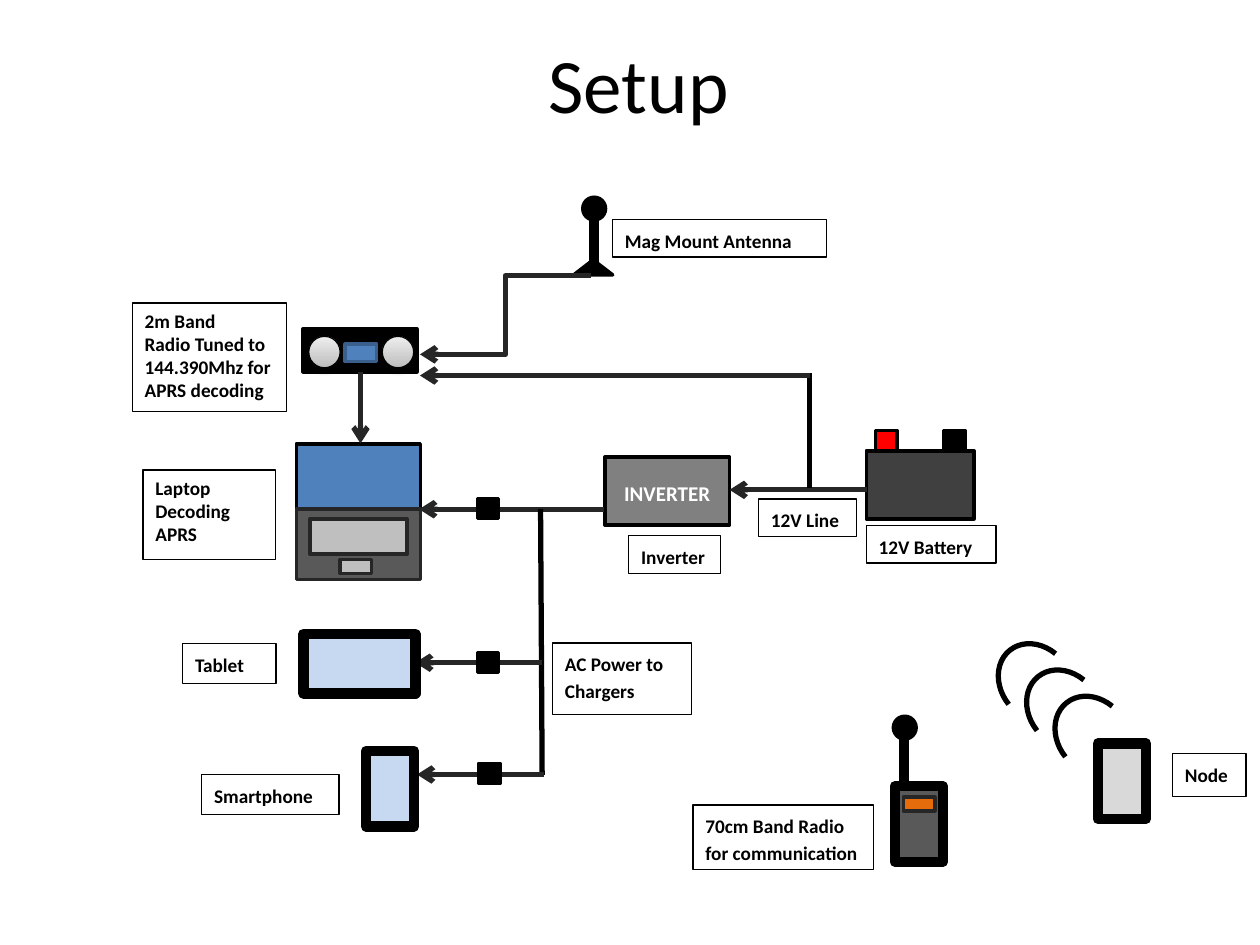
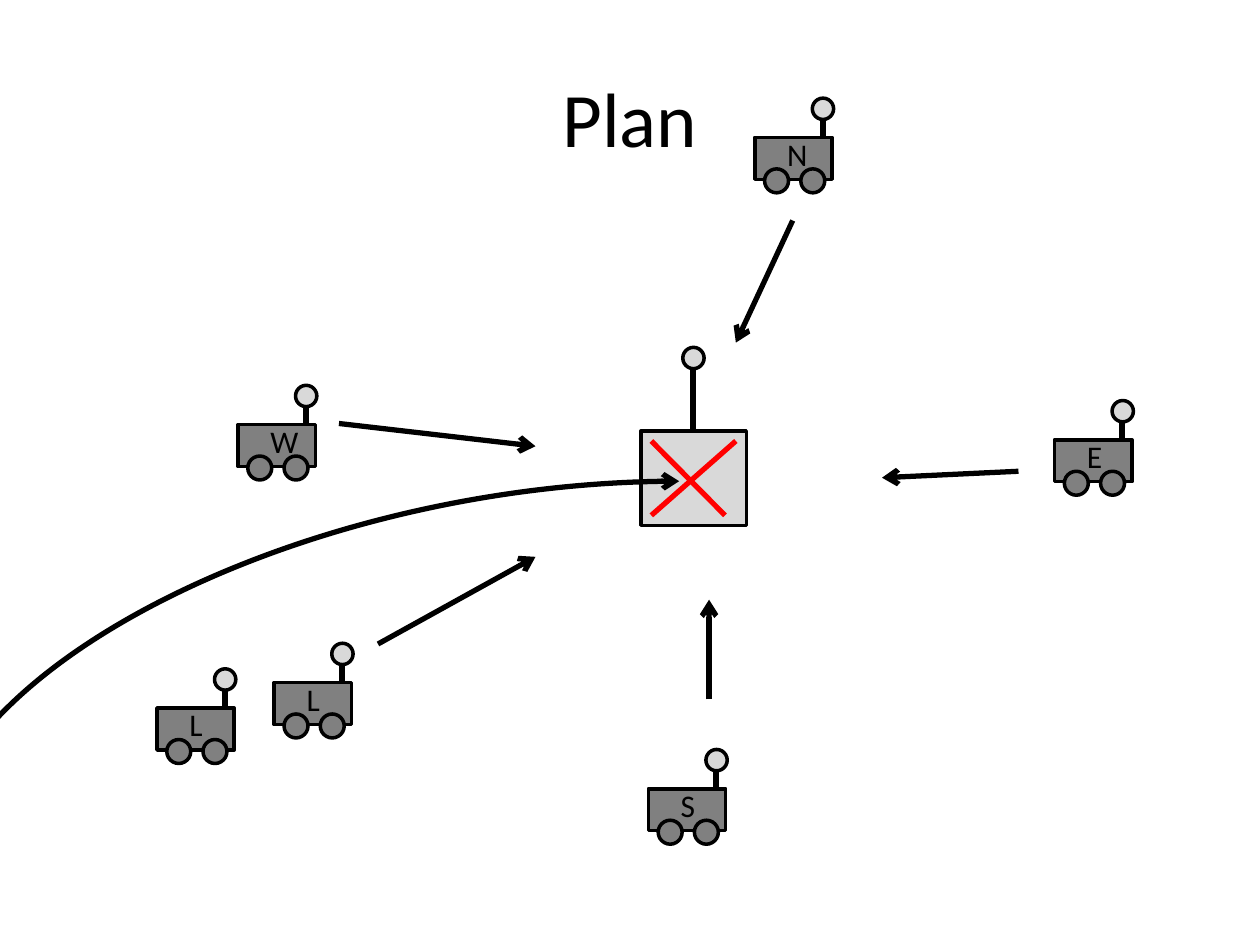
from lxml import etree
from pptx import Presentation
from pptx.dml.color import RGBColor
from pptx.enum.shapes import MSO_CONNECTOR, MSO_SHAPE
from pptx.enum.text import MSO_ANCHOR, PP_ALIGN
from pptx.oxml.ns import qn
from pptx.util import Pt

RECT, OVAL = MSO_SHAPE.RECTANGLE, MSO_SHAPE.OVAL
TRIANGLE, ARC = MSO_SHAPE.ISOSCELES_TRIANGLE, MSO_SHAPE.ARC
STRAIGHT, ELBOW, CURVE = MSO_CONNECTOR.STRAIGHT, MSO_CONNECTOR.ELBOW, MSO_CONNECTOR.CURVE
TOP, MIDDLE = MSO_ANCHOR.TOP, MSO_ANCHOR.MIDDLE
LEFT, CENTER = PP_ALIGN.LEFT, PP_ALIGN.CENTER

FONT = "Calibri"
BLACK = RGBColor(0x00, 0x00, 0x00)
WHITE = RGBColor(0xFF, 0xFF, 0xFF)
RED = RGBColor(0xFF, 0x00, 0x00)
INK = RGBColor(0x26, 0x26, 0x26)
CHARCOAL = RGBColor(0x40, 0x40, 0x40)
DARK_GRAY = RGBColor(0x59, 0x59, 0x59)
GRAY = RGBColor(0x80, 0x80, 0x80)
SILVER = RGBColor(0xBF, 0xBF, 0xBF)
LIGHT_GRAY = RGBColor(0xD9, 0xD9, 0xD9)
KNOB_DARK = RGBColor(0xBD, 0xBD, 0xBD)
KNOB_LIGHT = RGBColor(0xEE, 0xEE, 0xEE)
BLUE = RGBColor(0x4F, 0x81, 0xBD)
BLUE_EDGE = RGBColor(0x3A, 0x5F, 0x8C)
PALE_BLUE = RGBColor(0xC6, 0xD9, 0xF1)
ORANGE = RGBColor(0xE4, 0x6C, 0x0A)

LABELS = [
    (350, 125.3, 122.4, 21.6, ["Mag Mount Antenna"], 1.15),
    (433.4, 285.1, 56.2, 21.6, ["12V Line"], 1.15),
    (495, 300.2, 74.2, 21.6, ["12V Battery"], 1.15),
    (359.3, 306, 52.6, 21.6, ["Inverter"], 1.15),
    (75.6, 173.2, 88, 62, ["2m Band", "Radio Tuned to 144.390Mhz for APRS decoding"], 1),
    (81.7, 268.6, 75.6, 51, ["Laptop Decoding APRS"], 1),
    (104.4, 367.5, 53.3, 23, ["Tablet"], 1.15),
    (115.2, 442.6, 78.5, 23, ["Smartphone"], 1.15),
    (396, 460, 103, 36.7, ["70cm Band Radio for communication"], 1.15),
    (315.7, 367.5, 79.5, 41, ["AC Power to Chargers"], 1.15),
    (670, 430.6, 42, 24.5, ["Node"], 1.15),
]

VEHICLES = [
    ("N", 431.3, 78.5),
    ("E", 602.6, 251.3),
    ("W", 136, 242.6),
    ("S", 370.5, 450.7),
    ("L", 156.7, 390),
    ("L", 89.7, 404.6),
]

APPROACHES = [
    (216, 368, 306, 318.2),
    (405.2, 399.6, 405.2, 342.7),
    (193.7, 242, 306, 255),
    (453, 126, 420.5, 195.8),
    (582, 269.3, 504, 273),
]


def add_text(sp, paragraphs, size, color=BLACK, bold=False, align=LEFT,
             anchor=TOP, spacing=1):
    tf = sp.text_frame
    tf.word_wrap = True
    tf.vertical_anchor = anchor
    for i, text in enumerate(paragraphs):
        p = tf.add_paragraph() if i else tf.paragraphs[0]
        p.alignment = align
        p.line_spacing = spacing
        if spacing > 1:
            p.space_after = Pt(10)
        r = p.add_run()
        r.text = text
        r.font.name = FONT
        r.font.size = Pt(size)
        r.font.bold = bold
        r.font.color.rgb = color


def add_textbox(s, x, y, w, h, text, size, **style):
    sp = s.shapes.add_textbox(Pt(x), Pt(y), Pt(w), Pt(h))
    add_text(sp, [text], size, **style)


def add_title(s, x, y, text):
    add_textbox(s, x, y, 648, 90, text, 44, align=CENTER, anchor=MIDDLE)


def add_shape(s, kind, x, y, w, h, fill, line=BLACK, width=2):
    sp = s.shapes.add_shape(kind, Pt(x), Pt(y), Pt(w), Pt(h))
    sp.shadow.inherit = False
    if fill is None:
        sp.fill.background()
    else:
        sp.fill.solid()
        sp.fill.fore_color.rgb = fill
    sp.line.color.rgb = line
    sp.line.width = Pt(width)
    return sp


def add_line(s, x1, y1, x2, y2, color=BLACK, width=3, arrow=False, kind=STRAIGHT):
    cx = s.shapes.add_connector(kind, Pt(x1), Pt(y1), Pt(x2), Pt(y2))
    cx.line.color.rgb = color
    cx.line.width = Pt(width)
    if arrow:
        etree.SubElement(cx.line._ln, qn("a:tailEnd"), type="arrow")
    etree.SubElement(cx._element.spPr, qn("a:effectLst"))


def add_label(s, x, y, w, h, paragraphs, spacing):
    sp = add_shape(s, RECT, x, y, w, h, WHITE, width=0.75)
    add_text(sp, paragraphs, 11, bold=True, spacing=spacing)


def add_knob(s, x, y):
    sp = add_shape(s, OVAL, x, y, 18, 18, KNOB_DARK, width=0.75)
    sp.fill.gradient()
    sp.fill.gradient_angle = 90
    for stop, color in zip(sp.fill.gradient_stops, (KNOB_DARK, KNOB_LIGHT)):
        stop.color.rgb = color
    effects = sp._element.spPr.find(qn("a:effectLst"))
    shadow = etree.SubElement(effects, qn("a:outerShdw"), blurRad=str(Pt(3.1)),
                              dist=str(Pt(1.6)), dir="5400000", rotWithShape="0")
    color = etree.SubElement(shadow, qn("a:srgbClr"), val="000000")
    etree.SubElement(color, qn("a:alpha"), val="38000")


def add_antenna(s, x, y):
    add_shape(s, RECT, x, y, 3.6, 35.3, BLACK)
    add_shape(s, OVAL, x - 4.5, y - 4.7, 13, 13, BLACK)


def add_radio(s):
    add_shape(s, RECT, 173.2, 188, 65, 24.5, BLACK)
    for x in (176.4, 218.4):
        add_knob(s, x, 192.2)
    add_shape(s, RECT, 197.3, 196.6, 18, 10, BLUE, BLUE_EDGE)


def add_laptop(s):
    add_shape(s, RECT, 169.4, 253.6, 70.8, 37.4, BLUE)
    add_shape(s, RECT, 169.4, 291, 70.8, 40.3, DARK_GRAY, INK)
    add_shape(s, RECT, 177, 296.5, 55.6, 20.2, SILVER, INK)
    add_shape(s, RECT, 194.4, 319.7, 18, 8, SILVER, INK)


def add_battery(s):
    add_shape(s, RECT, 495, 257.6, 61.6, 38.9, CHARCOAL)
    for x, color in ((500.4, RED), (539.3, BLACK)):
        add_shape(s, RECT, x, 246, 12.2, 11.5, color)


def add_device(s, x, y, fill, w=27.4, h=43.2):
    add_shape(s, RECT, x, y, w, h, fill, width=6)


def add_vehicle(s, name, x, y):
    add_shape(s, RECT, x, y, 44.2, 24, GRAY)
    for dx in (5.6, 26.3):
        add_shape(s, OVAL, x + dx, y + 18, 13.7, 13.7, GRAY)
    add_line(s, x + 38.8, y - 10.2, x + 38.8, y, width=3.5)
    add_shape(s, OVAL, x + 32.9, y - 22.4, 12.2, 12.2, LIGHT_GRAY)
    add_textbox(s, x + 11.4, y - 5, 31, 28.8, name, 18)


def build_setup(s):
    add_title(s, 41, 2.2, "Setup")
    add_antenna(s, 337.5, 117.4)
    add_shape(s, TRIANGLE, 327.8, 148.5, 22.3, 8.6, BLACK)
    add_radio(s)
    add_laptop(s)
    add_line(s, 337.7, 157.5, 240, 202.5, INK, arrow=True, kind=ELBOW)
    add_line(s, 206, 212.4, 206, 253.4, INK, arrow=True)
    inverter = add_shape(s, RECT, 345.6, 261.2, 71.3, 38.9, GRAY)
    add_text(inverter, ["INVERTER"], 12, WHITE, True, CENTER, MIDDLE, 1.15)
    add_battery(s)
    add_line(s, 495.4, 279.9, 416.9, 279.9, INK, arrow=True)
    add_line(s, 345, 291, 239.5, 291, INK, arrow=True)
    add_line(s, 462.7, 278.6, 462.7, 213.1)
    add_line(s, 462.7, 214.6, 240, 214.6, INK, arrow=True)
    add_line(s, 309.8, 442.8, 308.9, 291)
    add_line(s, 309.6, 378.7, 237.3, 378.7, INK, arrow=True)
    add_line(s, 311, 442.6, 238.3, 442.6, INK, arrow=True)
    add_device(s, 173.4, 362.2, PALE_BLUE, 64, 34)
    add_device(s, 209.2, 429.1, PALE_BLUE)
    add_device(s, 511.4, 449.3, DARK_GRAY)
    add_antenna(s, 515, 414)
    add_shape(s, RECT, 516.2, 455.4, 18, 8, ORANGE, INK)
    add_device(s, 627.4, 424.8, LIGHT_GRAY)
    for label in LABELS:
        add_label(s, *label)
    for x, y in ((272.8, 284.9), (272.8, 372.9), (273.6, 436.2)):
        add_shape(s, RECT, x, y, 12.2, 11.5, BLACK)
    for i in range(3):
        wave = add_shape(s, ARC, 600.5 - 16.2 * i, 400.3 - 15 * i, 47.5, 39.6, None, width=3)
        wave.rotation = 231.4
        wave.adjustments[0] = 162
        wave.adjustments[1] = 43.74


def build_plan(s):
    add_title(s, 36, 21.6, "Plan")
    add_shape(s, RECT, 366.3, 246.2, 60.2, 54, LIGHT_GRAY)
    add_line(s, 396, 204.5, 396, 246.2, width=3.5)
    add_shape(s, OVAL, 390.2, 198.5, 12.2, 12.2, LIGHT_GRAY)
    add_line(s, -470.2, 713.5, 388.1, 275, arrow=True, kind=CURVE)
    add_line(s, 420.5, 252, 372.2, 294.5, RED)
    add_line(s, 372.2, 252, 414.3, 294.5, RED)
    for vehicle in VEHICLES:
        add_vehicle(s, *vehicle)
    for ends in APPROACHES:
        add_line(s, *ends, arrow=True)


def main():
    prs = Presentation()
    prs.slide_width, prs.slide_height = Pt(720), Pt(540)
    for build in (build_setup, build_plan):
        build(prs.slides.add_slide(prs.slide_layouts[6]))
    prs.save("out.pptx")


if __name__ == "__main__":
    main()
